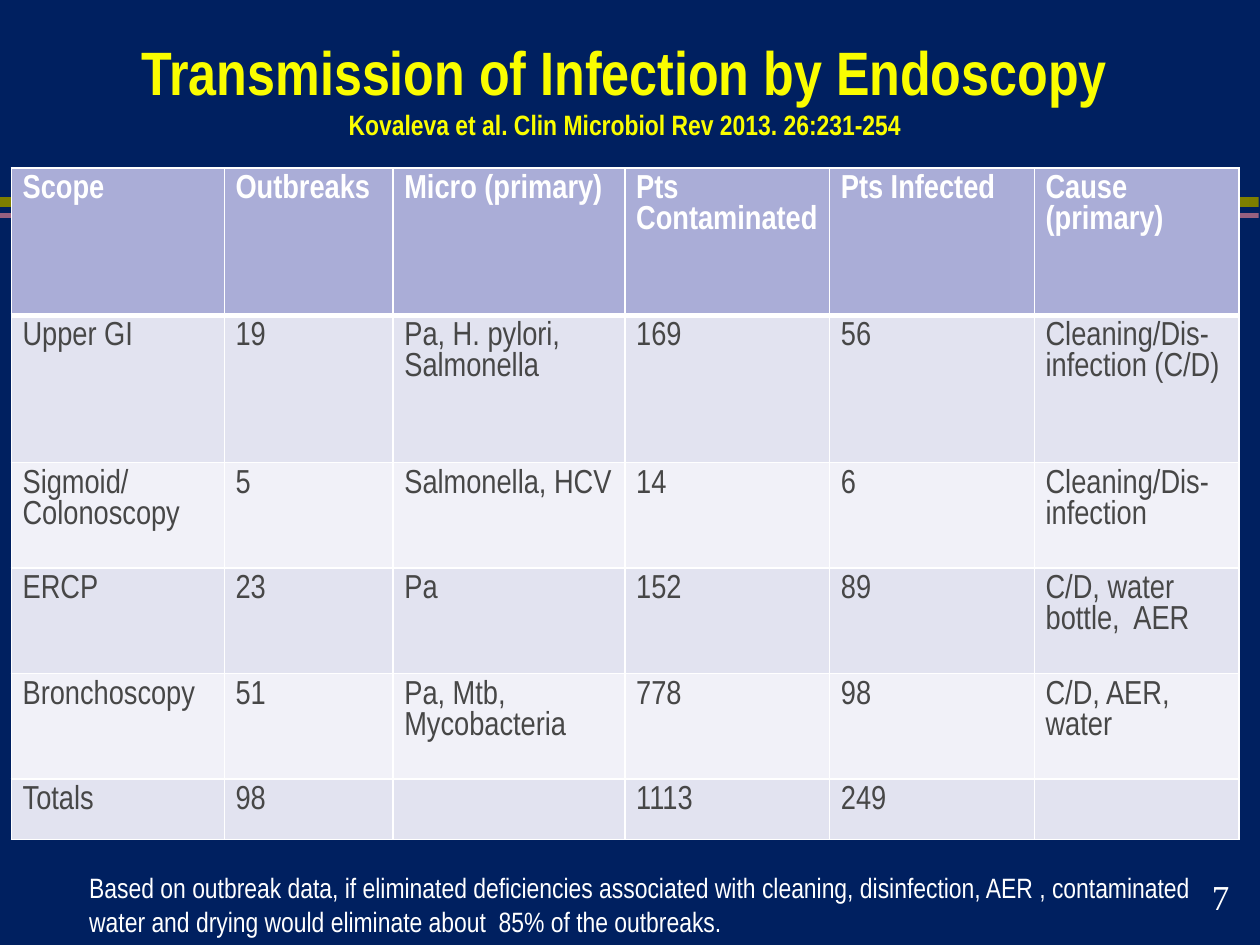
from copy import deepcopy
from dataclasses import dataclass

from lxml import etree
from pptx import Presentation, util as u
from pptx.dml.color import RGBColor
from pptx.enum import shapes, text
from pptx.oxml.ns import qn


@dataclass(frozen=True)
class Theme:
    navy: str = "002060"
    yellow: str = "FAFD00"
    white: str = "FFFFFF"
    ink: str = "474747"
    header: str = "AAADD7"
    bands: tuple = ("E2E3F0", "F1F1F8")
    olive: tuple = ("7D7E00", "FAFD00", "7D7E00")
    mauve: tuple = ("976080", "D989B8", "976080")
    sans: str = "Arial Narrow"
    serif: str = "Times New Roman"
    title: int = 35
    note: int = 16
    cell: int = 19
    number: int = 20


class Deck:
    """Style and current slide; lengths are in a grid of 100 columns by 75 rows."""

    COLS, ROWS = 100, 75

    def __init__(self, theme):
        self.theme = theme
        self.prs = Presentation()
        self.prs.slide_width, self.prs.slide_height = u.Inches(10), u.Inches(7.5)
        self.s = self.prs.slides.add_slide(self.prs.slide_layouts[6])
        fill = self.s.background.fill
        fill.solid()
        fill.fore_color.rgb = RGBColor.from_string(theme.navy)

    def x(self, cols):
        return round(self.prs.slide_width * cols / self.COLS)

    def y(self, rows):
        return round(self.prs.slide_height * rows / self.ROWS)

    def box(self, left, top, width, height):
        return self.x(left), self.y(top), self.x(width), self.y(height)

    def run(self, p, words, color, size, name=None, bold=False):
        r = p.add_run()
        r.text = words
        style = {"name": name or self.theme.sans, "size": u.Pt(size), "bold": bold}
        for key, value in style.items():
            setattr(r.font, key, value)
        r.font.color.rgb = RGBColor.from_string(color)

    def stripe(self, at, colors):
        """Draw a bar with an evenly spaced horizontal gradient."""
        sp = self.s.shapes.add_shape(shapes.MSO_SHAPE.RECTANGLE, *self.box(*at))
        sp.shadow.inherit = False
        sp.line.fill.background()
        sp.fill.gradient()
        sp.fill.gradient_angle = 0
        stops = sp._element.spPr.find(".//" + qn("a:gsLst"))
        while len(stops) < len(colors):
            stops.append(deepcopy(stops[0]))
        for i, (stop, color) in enumerate(zip(sp.fill.gradient_stops, colors)):
            stop.position = i / (len(colors) - 1)
            stop.color.rgb = RGBColor.from_string(color)

    def text(self, at, lines, **frame):
        """Add one paragraph; each line is the keyword arguments of a run."""
        tf = self.s.shapes.add_textbox(*self.box(*at)).text_frame
        for key, value in ({"word_wrap": True} | frame).items():
            setattr(tf, key, value)
        p = tf.paragraphs[0]
        for i, line in enumerate(lines):
            if i:
                p.add_line_break()
            self.run(p, **line)
        return p

    def borders(self, cell, **widths):
        tc_pr = cell._tc.get_or_add_tcPr()
        for i, side in enumerate("LRTB"):
            ln = etree.Element(qn(f"a:ln{side}"), w=str(u.Pt(widths.get(side, 1))))
            fill = etree.SubElement(ln, qn("a:solidFill"))
            etree.SubElement(fill, qn("a:srgbClr"), val=self.theme.white)
            tc_pr.insert(i, ln)

    def cell(self, cell, words, row):
        t = self.theme
        head = row == 0
        cell.margin_left, cell.margin_right = self.x(0.9), self.x(0.6)
        cell.fill.solid()
        color = t.header if head else t.bands[(row - 1) % 2]
        cell.fill.fore_color.rgb = RGBColor.from_string(color)
        self.borders(cell, **({"B": 3} if head else {"T": 3} if row == 1 else {}))
        for i, line in enumerate(words.split("\n") if words else []):
            tf = cell.text_frame
            p = tf.add_paragraph() if i else tf.paragraphs[0]
            self.run(p, line, t.white if head else t.ink, t.cell, bold=head)

    def table(self, left, top, cols, rows, data):
        at = self.box(left, top, sum(cols), sum(rows))
        table = self.s.shapes.add_table(len(rows), len(cols), *at).table
        table.horz_banding = False
        for column, width in zip(table.columns, cols):
            column.width = self.x(width)
        for i, height in enumerate(rows):
            table.rows[i].height = self.y(height)
            for j, words in enumerate(data[i]):
                self.cell(table.cell(i, j), words, i)


OUTBREAKS = [
    ["Scope", "Outbreaks", "Micro (primary)", "Pts Contaminated", "Pts Infected",
     "Cause (primary)"],
    ["Upper GI", "19", "Pa, H. pylori, Salmonella", "169", "56",
     "Cleaning/Dis-infection (C/D)"],
    ["Sigmoid/Colonoscopy", "5", "Salmonella, HCV", "14", "6", "Cleaning/Dis-infection"],
    ["ERCP", "23", "Pa", "152", "89", "C/D, water bottle,  AER"],
    ["Bronchoscopy", "51", "Pa, Mtb,\nMycobacteria", "778", "98", "C/D, AER, water"],
    ["Totals", "98", "", "1113", "249", ""],
]


def main():
    t = Theme()
    deck = Deck(t)
    deck.stripe((0, 15.6, 99.9, 0.8), t.olive)
    deck.stripe((0, 16.9, 99.9, 0.4), t.mauve)

    heading = {"color": t.yellow, "bold": True}
    title = deck.text(
        (4.4, 1.7, 90.4, 10),
        [{"words": "Transmission of Infection by Endoscopy", "size": t.title} | heading,
         {"words": "Kovaleva et al. Clin Microbiol Rev 2013. 26:231-254",
          "size": t.note} | heading],
        vertical_anchor=text.MSO_ANCHOR.BOTTOM)
    title.alignment = text.PP_ALIGN.CENTER

    deck.table(0.9, 13.33, [16.9, 13.4, 18.4] + [16.25] * 3,
               [11.7] * 2 + [8.37] * 3 + [4.8], OUTBREAKS)

    deck.text(
        (6.1, 68.6, 90.9, 6.4),
        [{"words": "Based on outbreak data, if eliminated deficiencies associated with "
                   "cleaning, disinfection, AER , contaminated water and drying would "
                   "eliminate about  85% of the outbreaks.",
          "color": t.white, "size": t.note}])
    deck.text((95.2, 69, 3.4, 4.4),
              [{"words": "7", "color": t.white, "size": t.number, "name": t.serif}],
              word_wrap=False)
    deck.prs.save("out.pptx")


if __name__ == "__main__":
    main()
